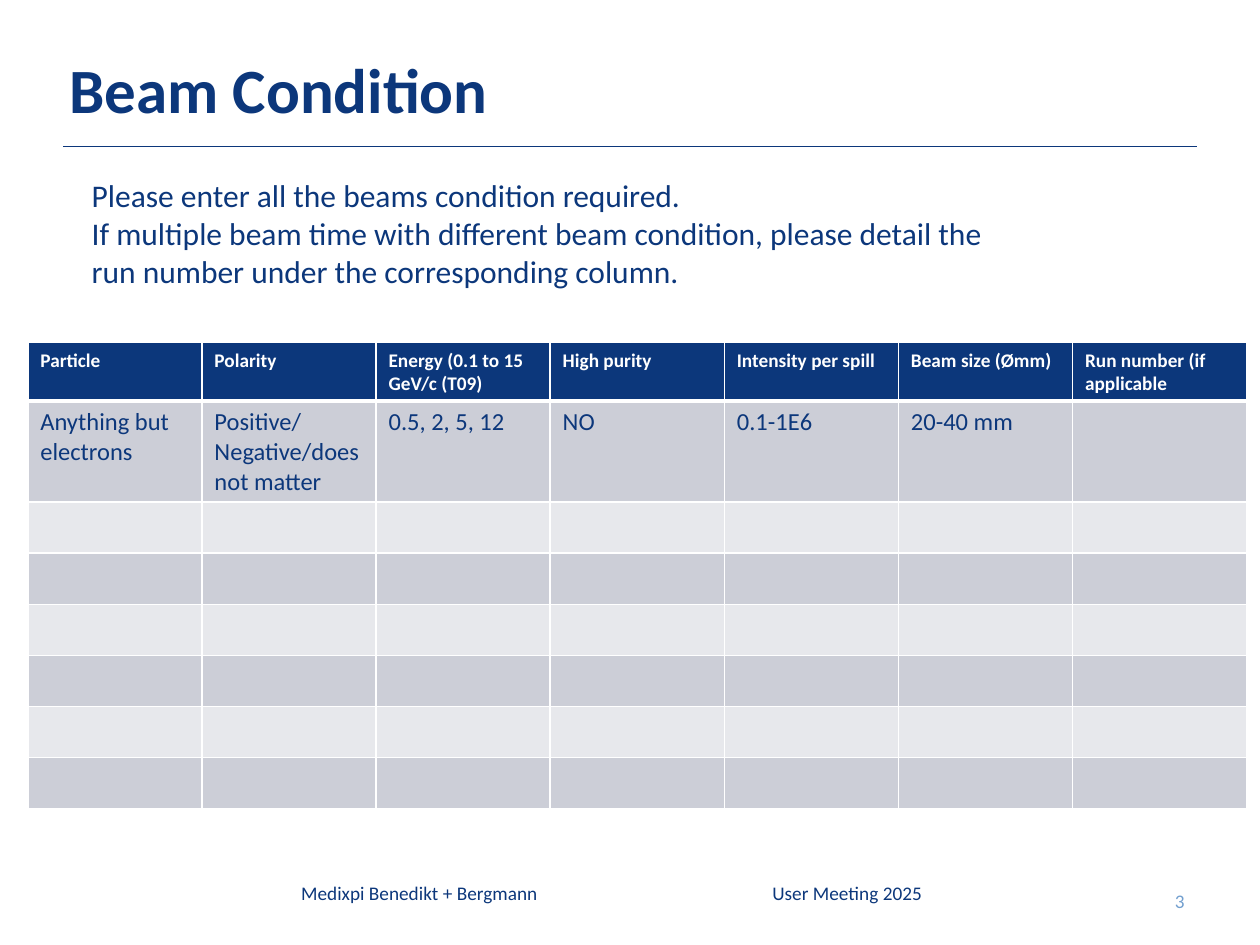
from lxml import etree
from pptx import Presentation
from pptx.dml.color import RGBColor
from pptx.enum.shapes import MSO_CONNECTOR
from pptx.enum.text import MSO_ANCHOR, PP_ALIGN
from pptx.oxml.ns import qn
from pptx.util import Cm, Pt

STRAIGHT = MSO_CONNECTOR.STRAIGHT
TOP, MIDDLE = MSO_ANCHOR.TOP, MSO_ANCHOR.MIDDLE
LEFT, RIGHT = PP_ALIGN.LEFT, PP_ALIGN.RIGHT

NAVY, WHITE, PALE_BLUE = "0C377B", "FFFFFF", "729FCF"
BANDS = ("CCCED7", "E7E8EC")
BLANK_ROWS = 6

HEADERS = ["Particle", "Polarity", "Energy (0.1 to 15 GeV/c (T09)", "High purity",
           "Intensity per spill", "Beam size (Ømm)", "Run number (if applicable"]
BEAM = ["Anything but electrons", "Positive/Negative/does not matter",
        "0.5, 2, 5, 12", "NO", "0.1-1E6", "20-40 mm", ""]


def rgb(value):
    return RGBColor.from_string(value)


class Deck:
    font = "Calibri"

    def __init__(self, prs):
        self.s = prs.slides.add_slide(prs.slide_layouts[6])

    def style(self, p, size, color, bold=False):
        p.font.name, p.font.size, p.font.bold = self.font, Pt(size), bold
        p.font.color.rgb = rgb(color)

    def text(self, box, lines, size, color=NAVY, bold=False, align=LEFT,
             anchor=TOP, inset=0.25):
        """Add a text box; box is left, top, width, height in cm."""
        tf = self.s.shapes.add_textbox(*map(Cm, box)).text_frame
        tf.word_wrap, tf.vertical_anchor = True, anchor
        tf.margin_left = tf.margin_right = Cm(inset)
        tf.text = "\n".join(lines)
        for p in tf.paragraphs:
            p.alignment = align
            self.style(p, size, color, bold)

    def line(self, x1, y1, x2, y2, color, width):
        sp = self.s.shapes.add_connector(STRAIGHT, Cm(x1), Cm(y1), Cm(x2), Cm(y2))
        sp.line.color.rgb, sp.line.width = rgb(color), Pt(width)
        etree.SubElement(sp.element.spPr, qn("a:effectLst"))

    def borders(self, cell, widths):
        """Draw white borders; widths are left, right, top, bottom in points."""
        tc_pr = cell._tc.get_or_add_tcPr()
        for side, width in zip("LRTB", widths):
            ln = etree.SubElement(tc_pr, qn(f"a:ln{side}"), w=str(Pt(width)))
            fill = etree.SubElement(ln, qn("a:solidFill"))
            etree.SubElement(fill, qn("a:srgbClr"), val=WHITE)

    def table(self, left, top, col_width, row_height, rows):
        n_rows, n_cols = len(rows), len(rows[0])
        table = self.s.shapes.add_table(
            n_rows, n_cols, Cm(left), Cm(top),
            Cm(col_width * n_cols), Cm(row_height * n_rows)).table
        for i, row in enumerate(rows):
            header = i == 0
            for j, label in enumerate(row):
                cell = table.cell(i, j)
                self.borders(cell, (1, 1, 3 if i == 1 else 1, 3 if header else 1))
                cell.fill.solid()
                cell.fill.fore_color.rgb = rgb(NAVY if header else BANDS[(i - 1) % 2])
                cell.text = label
                self.style(cell.text_frame.paragraphs[0], 11 if header else 14,
                           WHITE if header else NAVY, header)


def main():
    prs = Presentation()
    prs.slide_width, prs.slide_height = Cm(25.4), Cm(19.05)
    deck = Deck(prs)

    deck.line(1.27, 2.95, 24.13, 2.95, NAVY, 0.5)
    deck.text((1.27, 0.66, 22.86, 2.26), ["Beam Condition"], 36, bold=True,
              anchor=MIDDLE, inset=0.13)
    deck.text((22.1, 17.65, 2.03, 1.02), ["3"], 11, PALE_BLUE, align=RIGHT,
              anchor=MIDDLE)
    deck.text((5.82, 17.65, 7.21, 1.02), ["Medixpi Benedikt + Bergmann"], 11)
    deck.text((15.32, 17.65, 6.78, 1.02), ["User Meeting 2025"], 11)

    blank_rows = [[""] * len(HEADERS)] * BLANK_ROWS
    deck.table(0.56, 6.9, 3.51, 1.03, [HEADERS, BEAM, *blank_rows])
    deck.text((1.6, 3.43, 18.97, 2.57), [
        "Please enter all the beams condition required.",
        "If multiple beam time with different beam condition, please detail the "
        "run number under the corresponding column."], 18)

    prs.save("out.pptx")


if __name__ == "__main__":
    main()
